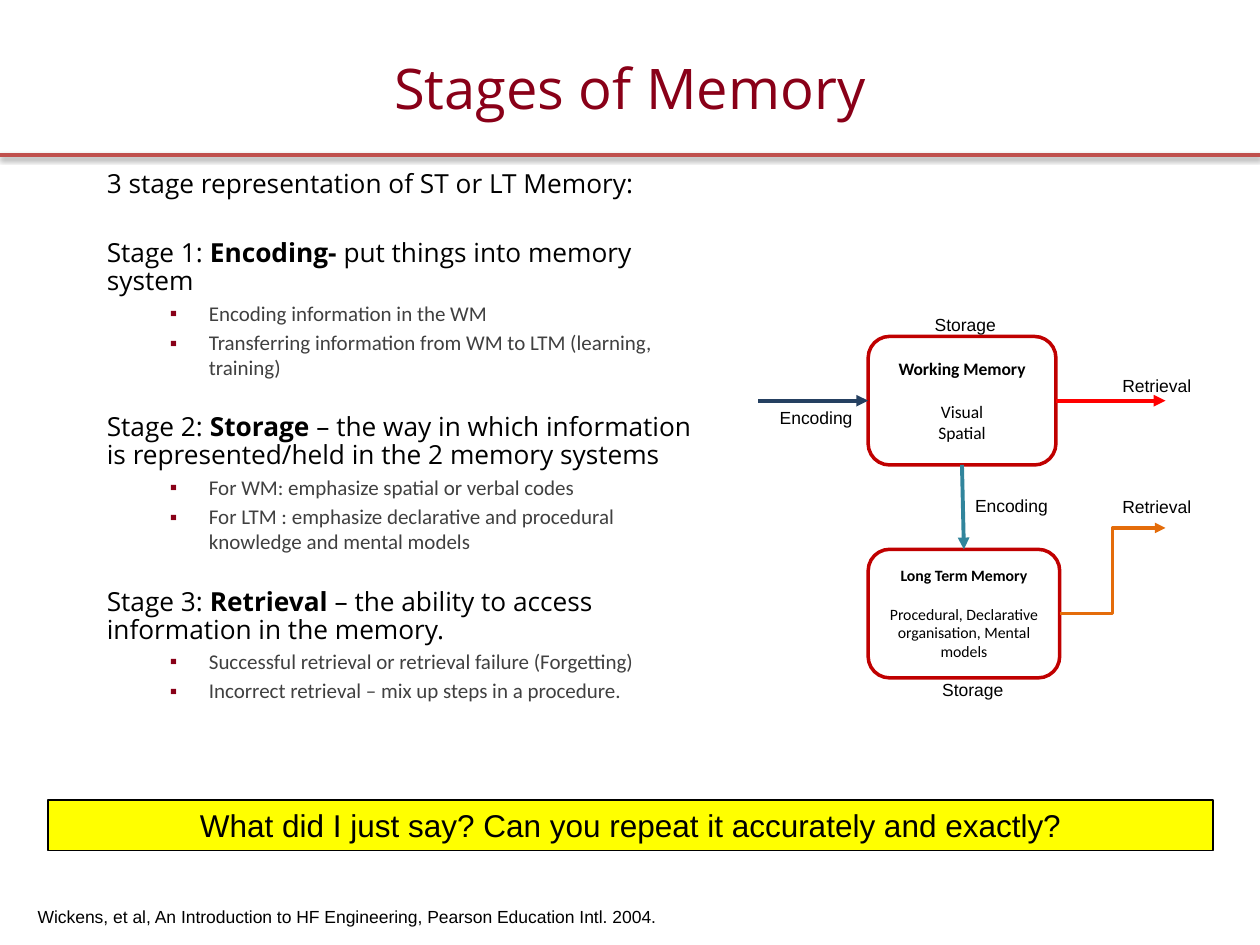
import pptx
import pptx.util
import pptx.dml.color
import pptx.enum.shapes
import pptx.enum.text
import pptx.oxml
import pptx.oxml.ns
from pptx.util import Inches

SHAPE = pptx.enum.shapes.MSO_SHAPE
CONNECTOR = pptx.enum.shapes.MSO_CONNECTOR
ALIGN = pptx.enum.text.PP_ALIGN
ANCHOR = pptx.enum.text.MSO_ANCHOR
TOP, LEFT, BOTTOM, RIGHT = range(4)
MAROON, BLACK = "890018", "000000"

# Heading parts (plain, bold, plain) and the bullets below each heading
STAGES = [
    (("Stage 1: ", "Encoding-", " put things into memory system"),
     ("Encoding information in the WM",
      "Transferring information from WM to LTM (learning, training)")),
    (("Stage 2: ", "Storage",
      " – the way in which information is represented/held in the 2 memory systems"),
     ("For WM: emphasize spatial or verbal codes",
      "For LTM : emphasize declarative and procedural knowledge and mental models")),
    (("Stage 3: ", "Retrieval", " – the ability to access information in the memory."),
     ("Successful retrieval or retrieval failure (Forgetting)",
      "Incorrect retrieval – mix up steps in a procedure.")),
]
LABELS = [
    ("Encoding", 6.09, 3.18, 0.86), ("Encoding", 7.64, 3.88, 0.86),
    ("Retrieval", 8.81, 2.93, 0.83), ("Retrieval", 8.81, 3.89, 0.83),
    ("Storage", 7.32, 2.44, 0.76), ("Storage", 7.38, 5.34, 0.76),
]


def color(value):
    return pptx.dml.color.RGBColor.from_string(value)


def add_xml(parent, xml):
    namespace = pptx.oxml.ns.nsdecls("a")
    parent.append(pptx.oxml.parse_xml(xml.replace(">", f" {namespace}>", 1)))


def style_font(font, name, size, value=BLACK, bold=False):
    font.name = name
    font.size = pptx.util.Pt(size)
    font.color.rgb = color(value)
    font.bold = bold


def style_runs(paragraph, *style):
    for run in paragraph.runs:
        style_font(run.font, *style)


def add_title(slide):
    title = slide.shapes.title
    title.left, title.top = Inches(0), Inches(0.36)
    title.width, title.height = Inches(10), Inches(0.67)
    title.text_frame.text = "Stages of Memory"
    title.text_frame.vertical_anchor = ANCHOR.MIDDLE
    paragraph = title.text_frame.paragraphs[0]
    paragraph.alignment = ALIGN.CENTER
    style_runs(paragraph, "Open Sans", 32, MAROON)


def add_heading(paragraph, parts, space_before):
    paragraph.line_spacing = 0.89
    paragraph.space_before = pptx.util.Pt(space_before)
    for index, part in enumerate(parts):
        run = paragraph.add_run()
        run.text = part
        style_font(run.font, "Open Sans", 15, BLACK, index == 1)


def add_bullet(paragraph, text):
    paragraph.text = text
    paragraph.line_spacing = 0.98
    paragraph.space_before = pptx.util.Pt(2.8)
    properties = paragraph._p.get_or_add_pPr()
    properties.set("marL", str(Inches(0.81)))
    properties.set("indent", str(Inches(-0.31)))
    add_xml(properties, f'<a:buClr><a:srgbClr val="{MAROON}"/></a:buClr>')
    add_xml(properties, '<a:buFont typeface="Arial"></a:buFont>')
    add_xml(properties, '<a:buChar char="▪"></a:buChar>')
    style_runs(paragraph, "Calibri", 12, "404040")


def add_stages(slide):
    box = slide.shapes.add_textbox(Inches(0.75), Inches(1.31), Inches(4.96), Inches(5))
    frame = box.text_frame
    frame.word_wrap = True
    add_heading(frame.paragraphs[0], ["3 stage representation of ST or LT Memory:"], 0)
    for index, (heading, bullets) in enumerate(STAGES):
        add_heading(frame.add_paragraph(), heading, 19.5 if index else 23.5)
        for bullet in bullets:
            add_bullet(frame.add_paragraph(), bullet)


def add_box(slide, kind, left, top, width, height, fill, line, line_width):
    shape = slide.shapes.add_shape(
        kind, Inches(left), Inches(top), Inches(width), Inches(height))
    shape.shadow.inherit = False
    shape.fill.solid()
    shape.fill.fore_color.rgb = color(fill)
    shape.line.color.rgb = color(line)
    shape.line.width = pptx.util.Pt(line_width)
    shape.text_frame.word_wrap = True
    shape.text_frame.vertical_anchor = ANCHOR.MIDDLE
    return shape


def add_memory(slide, top, width, name, content, size):
    shape = add_box(slide, SHAPE.ROUNDED_RECTANGLE, 6.89, top, width, 1.02,
                    "FFFFFF", "C00000", 2)
    heading = shape.text_frame.paragraphs[0]
    heading.text = name
    detail = shape.text_frame.add_paragraph()
    detail.text = content
    detail.space_before = pptx.util.Pt(size * 1.22)
    for paragraph in (heading, detail):
        paragraph.alignment = ALIGN.CENTER
        style_runs(paragraph, "Calibri", size, BLACK, paragraph is heading)
    return shape


def add_line(slide, kind, start, end, value, width, arrow=True, effects=""):
    line = slide.shapes.add_connector(kind, *map(Inches, start + end))
    line.line.color.rgb = color(value)
    line.line.width = pptx.util.Pt(width)
    if arrow:
        add_xml(line.line._get_or_add_ln(), '<a:tailEnd type="triangle"></a:tailEnd>')
    add_xml(line._element.spPr, f"<a:effectLst>{effects}</a:effectLst>")
    return line


def add_label(slide, text, left, top, width, height=0.28):
    box = slide.shapes.add_textbox(
        Inches(left), Inches(top), Inches(width), Inches(height))
    box.text_frame.word_wrap = False
    box.text_frame.text = text
    style_runs(box.text_frame.paragraphs[0], "Arial", 10)


def add_diagram(slide):
    working = add_memory(slide, 2.67, 1.49, "Working Memory", "Visual\vSpatial", 10)
    long_term = add_memory(slide, 4.36, 1.52, "Long Term Memory",
                           "Procedural, Declarative organisation, Mental models", 9)

    # Arrows into, between and out of the two memories
    straight = CONNECTOR.STRAIGHT
    encoding = add_line(slide, straight, (6.02, 3.18), (6.89, 3.18), "254061", 2.25)
    encoding.end_connect(working, LEFT)
    retrieval = add_line(slide, straight, (8.38, 3.18), (9.25, 3.18), "FF0000", 2.25)
    retrieval.begin_connect(working, RIGHT)
    transfer = add_line(slide, straight, (7.64, 3.69), (7.65, 4.36), "31859C", 2.25)
    transfer.begin_connect(working, BOTTOM)
    transfer.end_connect(long_term, TOP)
    recall = add_line(slide, CONNECTOR.ELBOW, (8.41, 4.87), (9.25, 4.19), "E46C0A", 2)
    recall.begin_connect(long_term, RIGHT)

    for label in LABELS:
        add_label(slide, *label)


def add_banner(slide):
    banner = add_box(slide, SHAPE.RECTANGLE, 0.38, 6.35, 9.25, 0.4, "FFFF00", BLACK, 1)
    banner.text_frame.text = "What did I just say? Can you repeat it accurately and exactly?"
    paragraph = banner.text_frame.paragraphs[0]
    paragraph.alignment = ALIGN.CENTER
    style_runs(paragraph, "Arial", 18)


def main():
    presentation = pptx.Presentation()
    presentation.slide_width, presentation.slide_height = Inches(10), Inches(7.5)
    slide = presentation.slides.add_slide(presentation.slide_layouts[5])

    # Rule under the title, with a soft shadow
    shadow = (f'<a:outerShdw blurRad="{pptx.util.Pt(3.1)}" dist="{pptx.util.Pt(1.6)}" '
              'dir="5400000" rotWithShape="0"><a:srgbClr val="000000">'
              '<a:alpha val="38000"/></a:srgbClr></a:outerShdw>')
    add_line(slide, CONNECTOR.STRAIGHT, (0, 1.23), (10, 1.23), "C0504D", 2, False, shadow)
    add_title(slide)
    add_stages(slide)
    add_diagram(slide)

    # Source and closing question
    add_label(slide, "Wickens, et al, An Introduction to HF Engineering, "
              "Pearson Education Intl. 2004.", 0.2, 7.14, 5.19, 0.27)
    add_banner(slide)
    presentation.save("out.pptx")


if __name__ == "__main__":
    main()
